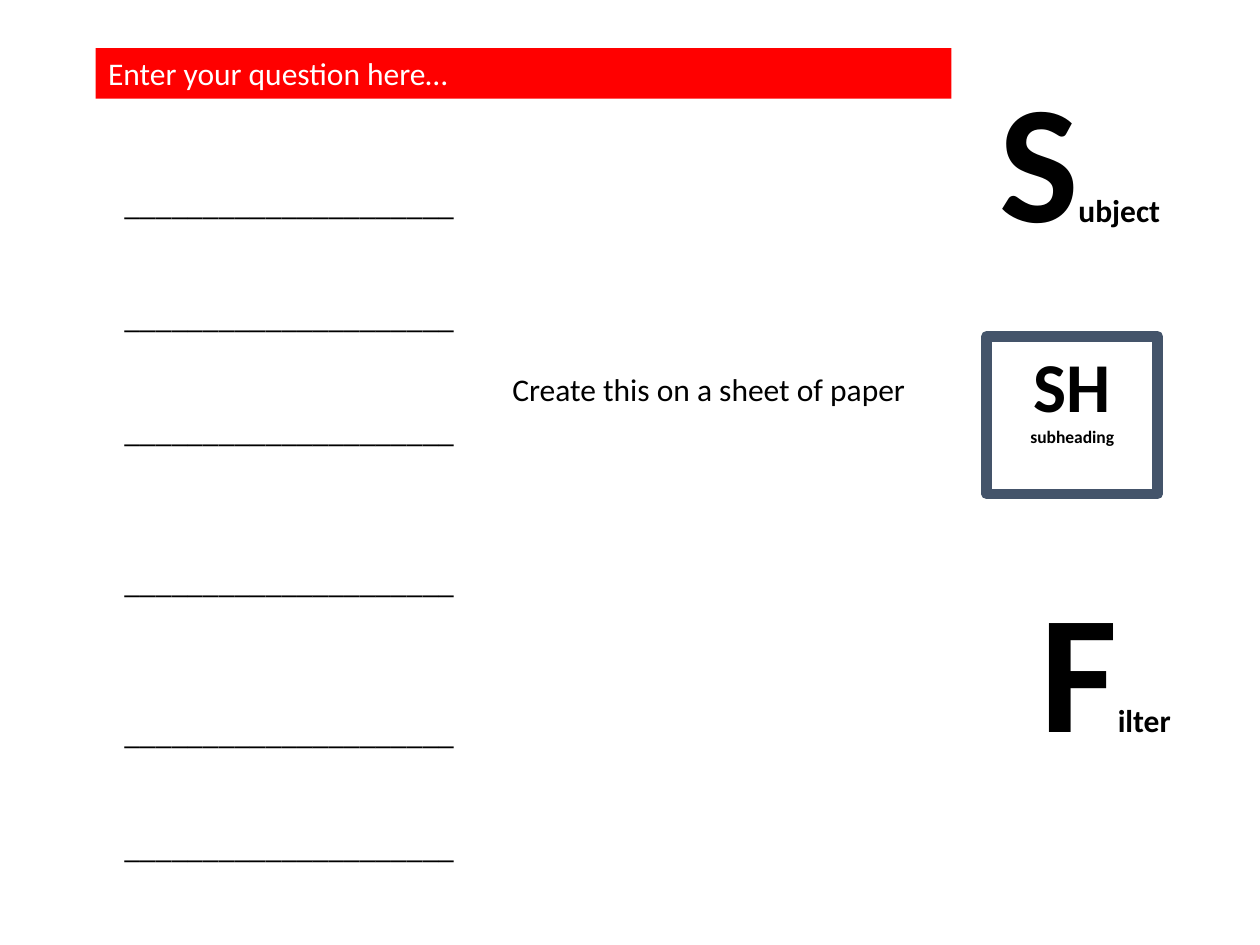
from lxml import etree
from pptx import Presentation
from pptx.dml.color import RGBColor
from pptx.enum.shapes import MSO_SHAPE as Shape
from pptx.enum.text import MSO_ANCHOR as Anchor, PP_ALIGN as Align
from pptx.oxml.ns import qn
from pptx.util import Cm, Pt

BLACK = RGBColor(0, 0, 0)
WHITE = RGBColor(255, 255, 255)
RED = RGBColor(255, 0, 0)
SLATE = RGBColor(0x44, 0x54, 0x6A)


class Sheet:
    font = "Calibri"
    size = 18

    def __init__(self, slide):
        self.slide = slide

    def fill_para(self, para, runs, color=BLACK, bold=False, align=Align.LEFT):
        """Fill a paragraph with (text, size) runs."""
        para.alignment = align
        font = para.font
        font.name, font.bold = self.font, bold
        font.color.rgb = color
        if len(runs) == 1:
            font.size = Pt(runs[0][1])
        for text, size in runs:
            run = para.add_run()
            run.text = text
            if len(runs) > 1:
                run.font.size = Pt(size)

    def text(self, box, runs, wrap=True, **style):
        frame = self.slide.shapes.add_textbox(*map(Cm, box)).text_frame
        frame.word_wrap = wrap
        self.fill_para(frame.paragraphs[0], runs, **style)

    def rect(self, box, runs, fill=None, line=None, **style):
        shape = self.slide.shapes.add_shape(Shape.RECTANGLE, *map(Cm, box))
        shape.shadow.inherit = False
        if fill is None:
            shape.fill.background()
        else:
            shape.fill.solid()
            shape.fill.fore_color.rgb = fill
        if line is None:
            shape.line.fill.background()
        else:
            shape.line.color.rgb = line
            shape.line.width = Pt(6)
            outline = shape.element.spPr.find(qn("a:ln"))
            etree.SubElement(outline, qn("a:round"))
        frame = shape.text_frame
        frame.word_wrap = True
        frame.vertical_anchor = Anchor.TOP
        self.fill_para(frame.paragraphs[0], runs, **style)

    def blanks(self, box, gaps):
        """Stack answer lines, each after a gap counted in text lines."""
        frame = self.slide.shapes.add_textbox(*map(Cm, box)).text_frame
        frame.word_wrap = True
        step = 1.2 * self.size
        frame.margin_top = Cm(0.13) + Pt(step * gaps[0])
        for i, gap in enumerate(gaps):
            para = frame.add_paragraph() if i else frame.paragraphs[0]
            if i:
                para.space_before = Pt(step * gap)
            self.fill_para(para, [("_" * 21, self.size)])


def main():
    deck = Presentation()
    deck.slide_width, deck.slide_height = Cm(25.4), Cm(19.05)
    sheet = Sheet(deck.slides.add_slide(deck.slide_layouts[6]))

    sheet.text((19.89, 0.97, 3.78, 5.13), [("S", 96), ("ubject", 18)],
               wrap=False, bold=True)
    sheet.rect((19.89, 6.78, 3.45, 3.18), [("SH ", 40), ("subheading", 10)],
               line=SLATE, bold=True, align=Align.CENTER)
    sheet.text((20.73, 11.25, 3.15, 5.13), [("F", 96), ("ilter", 18)],
               wrap=False, bold=True)
    sheet.rect((1.93, 0.97, 17.25, 1.02), [("Enter your question here…", 18)],
               fill=RED, color=WHITE)
    sheet.blanks((2.26, 2.82, 7.19, 14.88), (1, 2, 2, 3, 3, 2))
    sheet.text((10.08, 7.34, 8.56, 1.02),
               [("Create this on a sheet of paper", 18)])

    deck.save("out.pptx")


if __name__ == "__main__":
    main()
